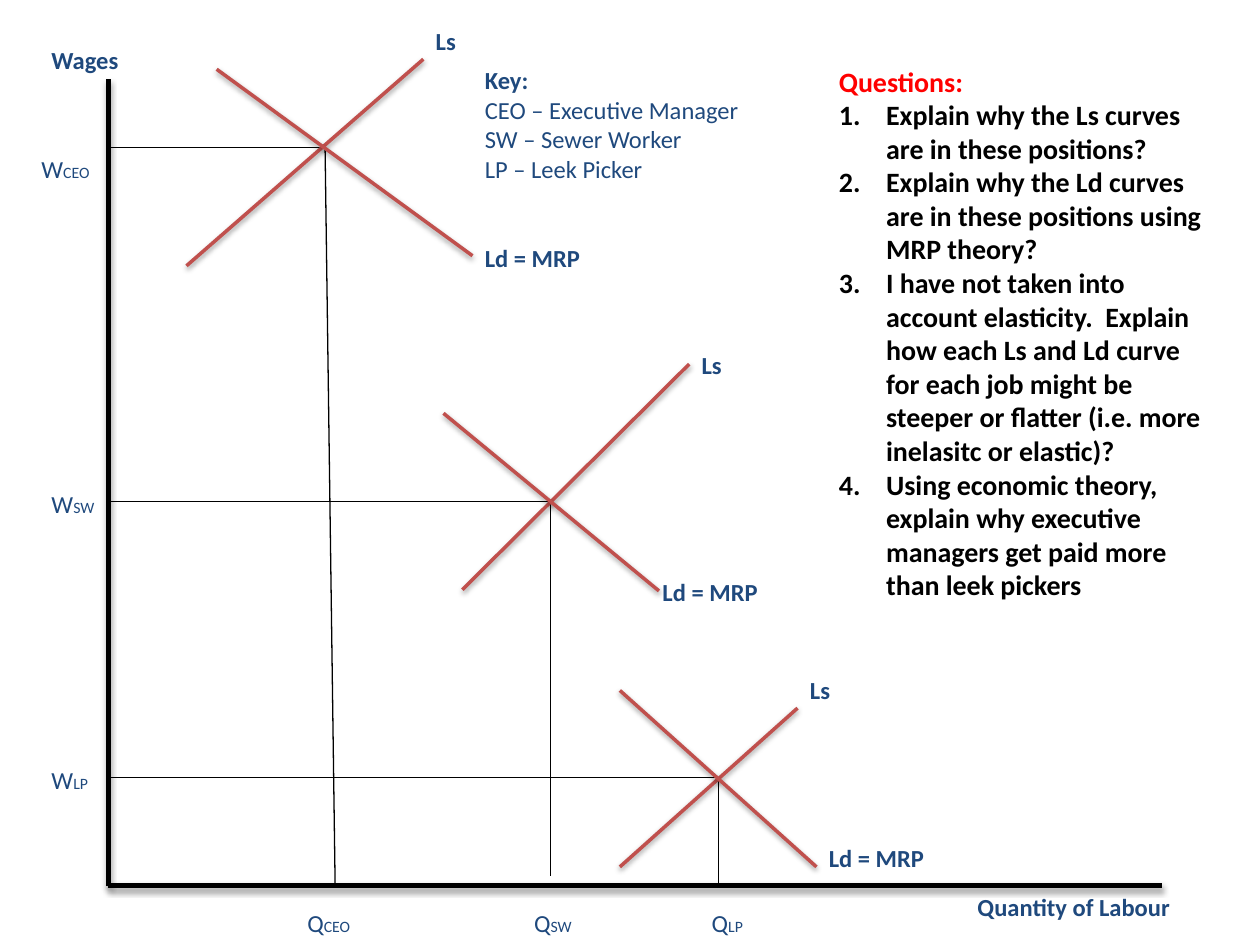
import pptx
import pptx.dml.color
import pptx.enum.shapes
import pptx.enum.text
import pptx.oxml.ns
import pptx.util
from collections import namedtuple
from lxml import etree

PX = 9144  # EMU per px, 100 px to the inch
NAVY, CURVE, BLACK, RED, WHITE = "1F497D", "C0504D", "000000", "FF0000", "FFFFFF"

Box = namedtuple("Box", "left top width height")
# Curve ends are offsets from the equilibrium; label nudges are offsets from
# the end of the curve, or from the equilibrium for the axis labels.
Market = namedtuple("Market", "job equilibrium foot supply demand "
                              "supply_nudge demand_nudge wage_label quantity_label")

MARKETS = [
    Market("CEO", (172, 54), (180, 640), ((-110, 94), (78, -70)), ((117, 86), (-86, -62)),
           (0, -31), (0, -15), (-63, 0, 59), (-24, 55)),
    Market("SW", (351, 335), (351, 632), ((-70, 70), (110, -109)), ((86, 71), (-85, -70)),
           (0, -16), (-7, -16), (-55, -15, 55), (-23, 50)),
    Market("LP", (484, 554), (484, 640), ((-78, 71), (63, -55)), ((78, 71), (-78, -69)),
           (0, -31), (0, -24), (-55, -15, 49), (-15, 45)),
]

KEY = ["CEO – Executive Manager", "SW – Sewer Worker", "LP – Leek Picker"]
QUESTIONS = [
    "Explain why the Ls curves are in these positions?",
    "Explain why the Ld curves are in these positions using MRP theory?",
    "I have not taken into account elasticity.  Explain how each Ls and Ld curve for each "
    "job might be steeper or flatter (i.e. more inelasitc or elastic)?",
    "Using economic theory, explain why executive managers get paid more than leek pickers",
]


def color(value):
    return pptx.dml.color.RGBColor.from_string(value)


def px(*lengths):
    return [pptx.util.Emu(length * PX) for length in lengths]


def add(point, offset):
    return point[0] + offset[0], point[1] + offset[1]


def draw_line(slide, start, end, line_color, width, shadow=None):
    """Straight line; shadow is (distance in EMU, opacity in percent)."""
    line = slide.shapes.add_connector(
        pptx.enum.shapes.MSO_CONNECTOR.STRAIGHT, *px(*start, *end))
    line.line.color.rgb = color(line_color)
    line.line.width = pptx.util.Pt(width)
    qn = pptx.oxml.ns.qn
    effects = etree.SubElement(line._element.spPr, qn("a:effectLst"))
    if shadow:
        distance, opacity = shadow
        outer = etree.SubElement(effects, qn("a:outerShdw"), blurRad="40000",
                                 dist=str(distance), dir="5400000", rotWithShape="0")
        tint = etree.SubElement(outer, qn("a:srgbClr"), val=BLACK)
        etree.SubElement(tint, qn("a:alpha"), val=str(opacity * 1000))


def style(paragraph, size, text_color, bold):
    font = paragraph.font
    font.name, font.size, font.bold = "Calibri", pptx.util.Pt(size), bold
    font.color.rgb = color(text_color)


def write_label(slide, box, lines, bold=True, subscript=None):
    frame = slide.shapes.add_textbox(*px(*box)).text_frame
    frame.word_wrap = False
    frame.auto_size = pptx.enum.text.MSO_AUTO_SIZE.SHAPE_TO_FIT_TEXT
    frame.text = "\n".join(lines)
    for paragraph in frame.paragraphs:
        style(paragraph, 14, NAVY, bold)
    if subscript:
        small = frame.paragraphs[0].add_run()
        small.text = subscript
        small.font.size = pptx.util.Pt(9)
    return frame


def draw_axes(slide, plot):
    bottom = plot.top + plot.height
    origin = (plot.left, bottom)
    for end in ((plot.left + plot.width, bottom), (plot.left, plot.top)):
        draw_line(slide, origin, end, BLACK, 3, (23000, 35))
    write_label(slide, (plot.left + 680, bottom, 174, 34), ["Quantity of Labour"])
    write_label(slide, (plot.left - 55, plot.top - 32, 74, 34), ["Wages"])


def draw_market(slide, plot, market):
    corner = (plot.left, plot.top)
    centre = add(corner, market.equilibrium)

    # Guides to the two axes
    draw_line(slide, (plot.left, centre[1]), centre, BLACK, 0.75)
    draw_line(slide, add(corner, market.foot), centre, BLACK, 0.75)
    dx, dy, width = market.wage_label
    write_label(slide, (plot.left + dx, centre[1] + dy, width, 34), ["W"], False, market.job)
    dx, width = market.quantity_label
    write_label(slide, (centre[0] + dx, plot.top + plot.height + 13, width, 34),
                ["Q"], False, market.job)

    # Supply and demand curves
    for start, end in (market.supply, market.demand):
        draw_line(slide, add(centre, start), add(centre, end), CURVE, 2, (20000, 38))
    supply_end = add(centre, market.supply[1])
    demand_end = add(centre, market.demand[0])
    write_label(slide, (*add(supply_end, market.supply_nudge), 36, 34), ["Ls"])
    write_label(slide, (*add(demand_end, market.demand_nudge), 96, 34), ["Ld = MRP"])


def write_key(slide, box):
    frame = write_label(slide, box, ["Key:"] + KEY, bold=False)
    frame.paragraphs[0].font.bold = True


def write_questions(slide, box):
    panel = slide.shapes.add_shape(pptx.enum.shapes.MSO_SHAPE.RECTANGLE, *px(*box))
    panel.shadow.inherit = False
    panel.fill.solid()
    panel.fill.fore_color.rgb = color(WHITE)
    panel.line.fill.background()

    frame = panel.text_frame
    frame.word_wrap = True
    frame.auto_size = pptx.enum.text.MSO_AUTO_SIZE.SHAPE_TO_FIT_TEXT
    frame.vertical_anchor = pptx.enum.text.MSO_ANCHOR.TOP
    frame.text = "\n".join(["Questions:"] + QUESTIONS)
    heading, *questions = frame.paragraphs
    for question in questions:
        props = question._p.get_or_add_pPr()
        props.set("marL", "342900")
        props.set("indent", "-342900")
        etree.SubElement(props, pptx.oxml.ns.qn("a:buAutoNum"), type="arabicPeriod")
        style(question, 16, BLACK, True)
    style(heading, 16, RED, True)
    for paragraph in frame.paragraphs:
        paragraph.alignment = pptx.enum.text.PP_ALIGN.LEFT


def main():
    deck = pptx.Presentation()
    deck.slide_width, deck.slide_height = px(1000, 750)
    slide = deck.slides.add_slide(deck.slide_layouts[6])

    plot = Box(86, 63, 836, 640)
    draw_axes(slide, plot)
    for market in MARKETS:
        draw_market(slide, plot, market)
    write_key(slide, Box(375, 47, 224, 104))
    write_questions(slide, Box(656, 46, 320, 454))

    deck.save("out.pptx")


if __name__ == "__main__":
    main()
